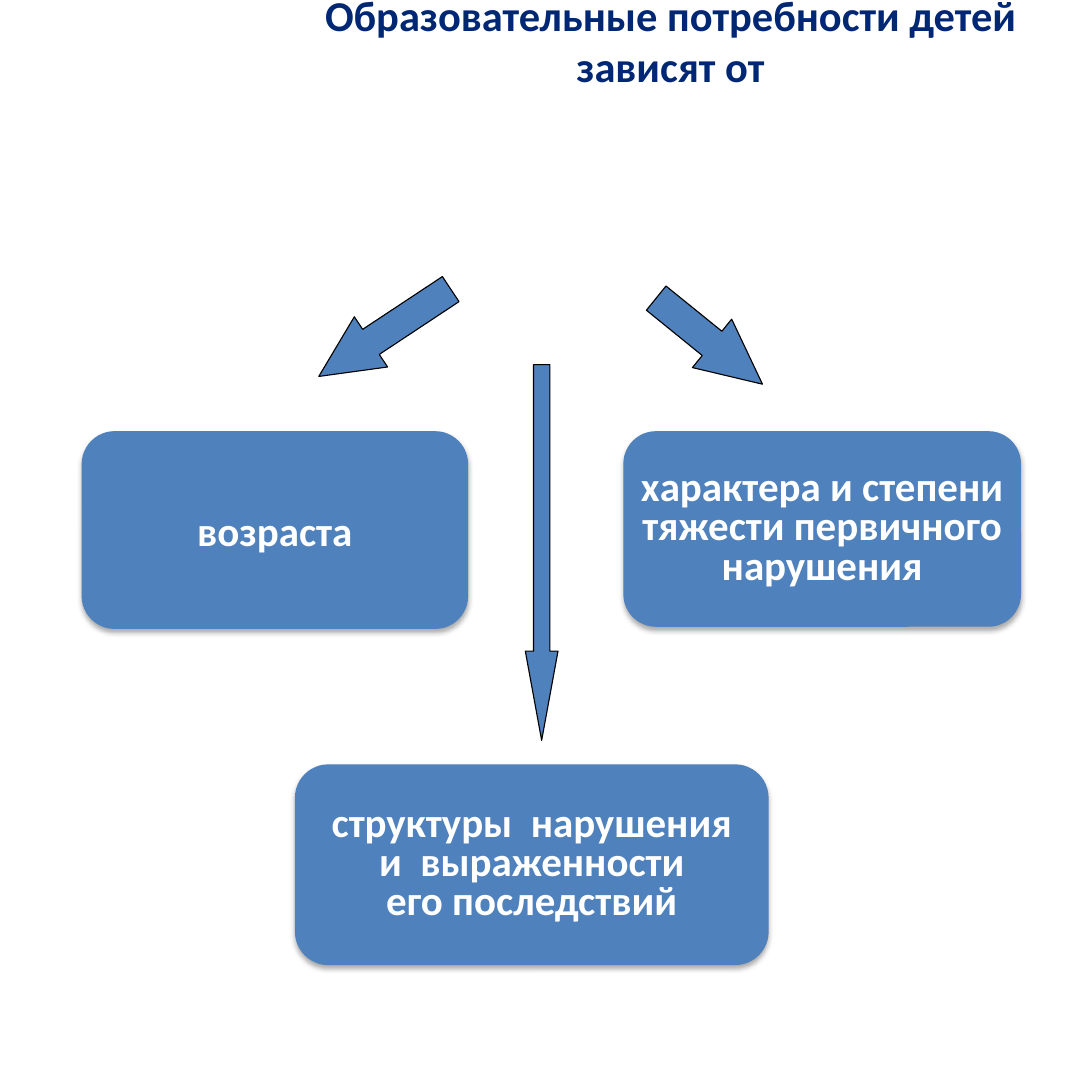
from lxml.etree import SubElement
from pptx import Presentation
from pptx.dml.color import RGBColor
from pptx.enum.shapes import MSO_SHAPE as Shape
from pptx.enum.text import MSO_ANCHOR as Anchor, PP_ALIGN as Align
from pptx.oxml.ns import qn
from pptx.util import Cm, Pt

NAVY = RGBColor(0x00, 0x27, 0x74)
BLUE = RGBColor(0x4F, 0x81, 0xBD)
WHITE = RGBColor(0xFF, 0xFF, 0xFF)
BLACK = RGBColor(0x00, 0x00, 0x00)


class NeedsSlide:
    font_name = "Calibri"
    title_size = Pt(28)
    box_size = Pt(27)

    def __init__(self, presentation):
        self.slide = presentation.slides.add_slide(presentation.slide_layouts[5])

    def format_paragraph(self, paragraph, size, color):
        paragraph.alignment = Align.CENTER
        font = paragraph.font
        font.name, font.size, font.bold = self.font_name, size, True
        font.color.rgb = color

    def title(self, text, left, top, width, height):
        shape = self.slide.shapes.title
        shape.left, shape.top = Cm(left), Cm(top)
        shape.width, shape.height = Cm(width), Cm(height)
        frame = shape.text_frame
        frame.text = text
        frame.vertical_anchor = Anchor.MIDDLE
        self.format_paragraph(frame.paragraphs[0], self.title_size, NAVY)

    def filled_shape(self, kind, left, top, width, height):
        shape = self.slide.shapes.add_shape(
            kind, Cm(left), Cm(top), Cm(width), Cm(height))
        shape.shadow.inherit = False
        shape.fill.solid()
        shape.fill.fore_color.rgb = BLUE
        return shape

    def add_shadow(self, shape):
        effects = shape.element.spPr.find(qn("a:effectLst"))
        shadow = SubElement(effects, qn("a:outerShdw"), blurRad=str(Pt(3.5)),
                            dist=str(Pt(2.2)), dir="5400000", rotWithShape="0")
        color = SubElement(shadow, qn("a:srgbClr"), val=str(BLACK))
        SubElement(color, qn("a:alpha"), val="32000")

    def box(self, lines, left, top, width, height):
        shape = self.filled_shape(Shape.ROUNDED_RECTANGLE, left, top, width, height)
        shape.line.fill.background()
        self.add_shadow(shape)
        frame = shape.text_frame
        frame.text = "\n".join(lines)
        frame.word_wrap = False
        frame.vertical_anchor = Anchor.MIDDLE
        frame.margin_left = frame.margin_right = Cm(0.33)
        frame.margin_top = frame.margin_bottom = Cm(0.18)
        for paragraph in frame.paragraphs:
            paragraph.line_spacing = 0.8 if len(lines) > 1 else 1.0
            self.format_paragraph(paragraph, self.box_size, WHITE)

    def arrow(self, left, top, width, height, rotation, head):
        shape = self.filled_shape(Shape.LEFT_ARROW, left, top, width, height)
        shape.line.color.rgb = BLACK
        shape.line.width = Pt(0.75)
        shape.adjustments[1] = head
        shape.rotation = rotation


def main():
    presentation = Presentation()
    presentation.slide_width = presentation.slide_height = Cm(25.4)
    needs = NeedsSlide(presentation)
    needs.title("Образовательные потребности детей зависят от",
                5.89, -0.71, 19.41, 3.28)
    needs.box(["возраста"], 1.9, 10.03, 8.99, 4.6)
    needs.box(["характера и степени", "тяжести первичного", "нарушения"],
              14.5, 10.03, 9.25, 4.55)
    needs.box(["структуры  нарушения", "и  выраженности", "его последствий"],
              6.86, 17.78, 11.02, 4.67)
    needs.arrow(7.11, 7.04, 3.68, 1.4, 326.5, 1.04)
    needs.arrow(14.91, 7.21, 3.18, 1.45, 219, 1.04)
    needs.arrow(8.23, 12.47, 8.74, 0.76, 270, 2.73)
    presentation.save("out.pptx")


if __name__ == "__main__":
    main()
